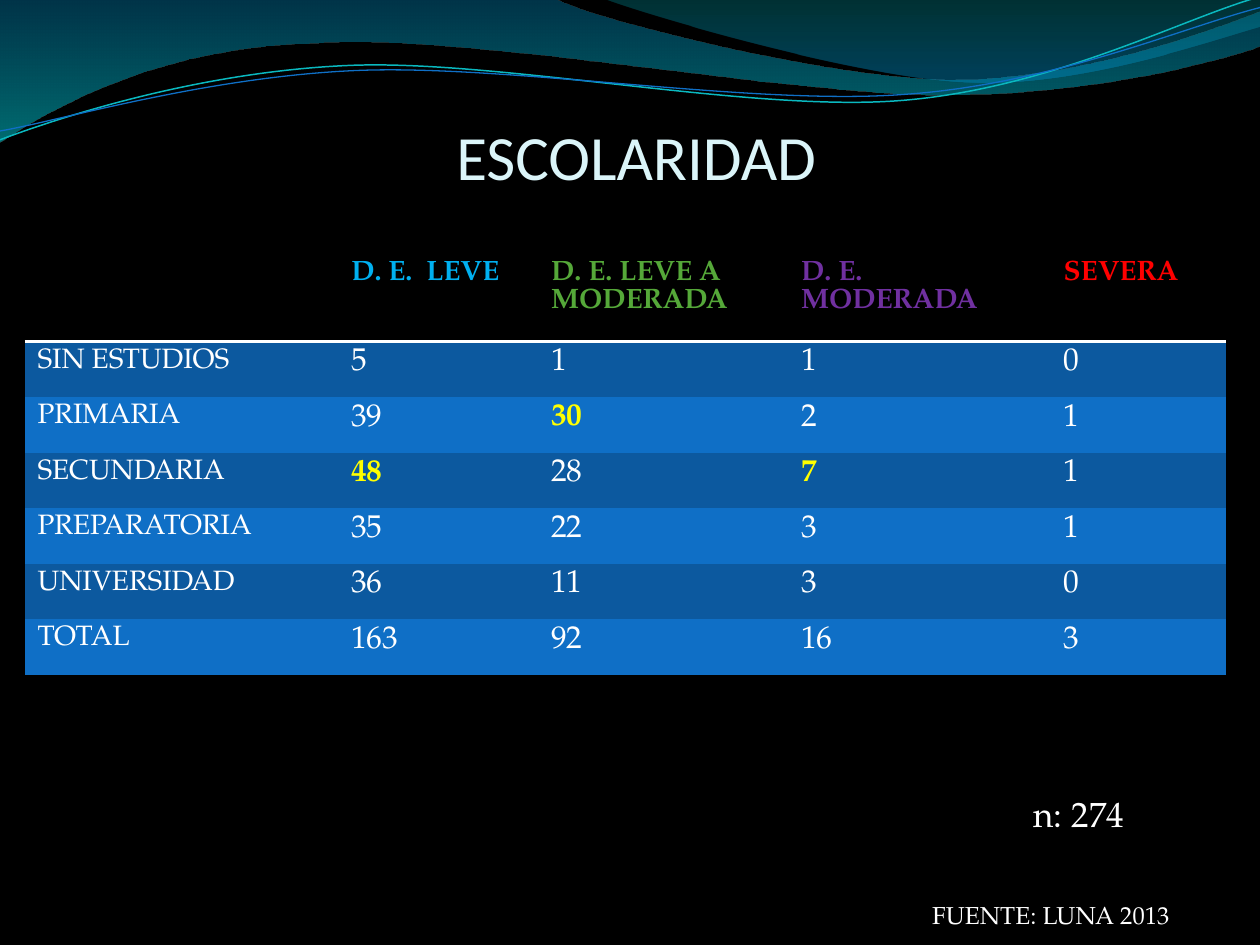
from dataclasses import dataclass
from typing import Optional

from lxml import etree
from pptx import Presentation
from pptx.dml.color import RGBColor
from pptx.enum.text import MSO_ANCHOR, MSO_AUTO_SIZE, PP_ALIGN
from pptx.oxml.ns import qn
from pptx.util import Emu, Inches, Pt

CENTER, LEFT = PP_ALIGN.CENTER, PP_ALIGN.LEFT
TOP, BOTTOM = MSO_ANCHOR.TOP, MSO_ANCHOR.BOTTOM
FIXED, GROW = MSO_AUTO_SIZE.NONE, MSO_AUTO_SIZE.SHAPE_TO_FIT_TEXT
GRID_COLUMNS = 100
SLIDE_WIDTH, SLIDE_HEIGHT = Inches(10), Inches(7.5)
PLAIN_TABLE_STYLE = "{2D5ABB26-0587-4C30-8999-92F81FD0307C}"

Point = tuple[float, float]


@dataclass(frozen=True)
class Theme:
    background: str = "000000"
    title: str = "DBF5F9"
    text: str = "FFFFFF"
    highlight: str = "FFFF00"
    bands: tuple[str, str] = ("0C599F", "0F6FC6")
    headings: tuple[str, ...] = ("FFFFFF", "00B0F0", "55A839", "7030A0", "FF0000")
    title_font: str = "Calibri"
    body_font: str = "TeX Gyre Pagella"
    title_size: int = 36
    label_size: int = 16
    value_size: int = 18
    sample_size: int = 20
    source_size: int = 14


@dataclass(frozen=True)
class TextStyle:
    size: int
    color: str
    font: str
    bold: bool = False


@dataclass(frozen=True)
class Label:
    text: str
    box: tuple[float, float, float, float]
    style: TextStyle
    align: PP_ALIGN = LEFT
    anchor: MSO_ANCHOR = TOP
    insets: tuple[float, float, float, float] = (1, 0.5, 1, 0.5)
    sizing: MSO_AUTO_SIZE = GROW


@dataclass(frozen=True)
class GradientStop:
    position: float
    color: str
    opacity: int


@dataclass(frozen=True)
class Wave:
    start: Point
    segments: tuple[tuple[Point, ...], ...]
    stops: tuple[GradientStop, ...] = ()
    line_color: Optional[str] = None
    line_width: float = 0


THEME = Theme()
BODY = THEME.body_font

WAVES = (
    Wave((0, 0), (
        ((44, -0.1),),
        ((47.6, 1.7), (66.4, 6.3), (75.8, 6.3)),
        ((85.3, 6.3), (95.8, 2.6), (100, 0.9)),
        ((100.1, 3.6),),
        ((98.3, 4.4), (87, 7.6), (74.6, 7.5)),
        ((62.2, 7.5), (38.2, 2.8), (25.7, 3.4)),
        ((12.9, 3.6), (4.6, 8.3), (-0.1, 11.3)),
    ), (GradientStop(0, "0074A1", 45), GradientStop(1, "00C6CF", 55))),
    Wave((47.9, -0.1), (
        ((50.9, 1.1), (68.2, 6.2), (76.9, 6.5)),
        ((85.6, 6.9), (96.1, 3.2), (100, 2.1)),
        ((100, 0),),
    ), (GradientStop(0, "00A1A9", 30), GradientStop(0.8, "008BBF", 45))),
    Wave((0, 11.1), (
        ((4.8, 9.3), (15.8, 5.7), (27.7, 5.2)),
        ((39.5, 4.7), (59.3, 8.9), (71.3, 8)),
        ((83.3, 7.1), (93.8, 1.5), (99.8, -0.2)),
    ), line_color="0AB8BF", line_width=0.85),
    Wave((0, 10.4), (
        ((4.7, 9.6), (16.4, 6.1), (28.3, 5.6)),
        ((40.3, 5.1), (59.7, 8.4), (71.7, 7.5)),
        ((83.6, 6.7), (94.1, 2.1), (100, 0.6)),
    ), line_color="0F6FC6", line_width=0.75),
)

LABELS = (
    Label("ESCOLARIDAD", (5.1, 6.8, 90.8, 8.5), TextStyle(THEME.title_size, THEME.title, THEME.title_font),
          CENTER, BOTTOM, (0, 0.5, 0, 0), FIXED),
    Label("n: 274", (81.05, 62.4, 12.6, 4.4), TextStyle(THEME.sample_size, THEME.text, BODY)),
    Label("FUENTE: LUNA 2013", (73, 70.95, 24.3, 3.4), TextStyle(THEME.source_size, THEME.text, BODY)),
)

HEADINGS = ("", "D. E.  LEVE", "D. E. LEVE A MODERADA", "D. E. MODERADA", "SEVERA")
ROWS = (
    ("SIN ESTUDIOS", "5", "1", "1", "0"),
    ("PRIMARIA", "39", "30", "2", "1"),
    ("SECUNDARIA", "48", "28", "7", "1"),
    ("PREPARATORIA", "35", "22", "3", "1"),
    ("UNIVERSIDAD", "36", "11", "3", "0"),
    ("TOTAL", "163", "92", "16", "3"),
)
HIGHLIGHTS = {(2, 2), (3, 1), (3, 3)}
TABLE_ORIGIN = (1.98, 20.2)
COLUMN_WIDTHS = (24.9, 15.87, 19.84, 20.84, 13.85)
ROW_HEIGHTS = (6.9,) + (4.41,) * len(ROWS)


def grid(units: float) -> Emu:
    return Emu(round(units * SLIDE_WIDTH / GRID_COLUMNS))


def rgb(color: str) -> RGBColor:
    return RGBColor.from_string(color)


def bend_segments(shape, segments: tuple[tuple[Point, ...], ...]) -> None:
    lines = iter(list(shape.element.spPr.iter(qn("a:lnTo"))))
    for controls in segments:
        first, *others = [next(lines) for _ in controls]
        if others:
            first.tag = qn("a:cubicBezTo")
        for other in others:
            first.append(other[0])
            other.getparent().remove(other)


def draw_wave(slide, wave: Wave) -> None:
    points = [wave.start] + [point for controls in wave.segments for point in controls]
    corners = [(grid(x), grid(y)) for x, y in points]
    builder = slide.shapes.build_freeform(*corners[0])
    builder.add_line_segments(corners[1:], close=bool(wave.stops))
    shape = builder.convert_to_shape()
    bend_segments(shape, wave.segments)
    shape.shadow.inherit = False
    if wave.line_color:
        shape.fill.background()
        shape.line.color.rgb = rgb(wave.line_color)
        shape.line.width = Pt(wave.line_width)
        return
    shape.line.fill.background()
    shape.fill.gradient()
    shape.fill.gradient_angle = 270
    for stop, target in zip(wave.stops, shape.fill.gradient_stops):
        target.position = stop.position
        target.color.rgb = rgb(stop.color)
    for stop, color in zip(wave.stops, shape.element.spPr.iter(qn("a:srgbClr"))):
        etree.SubElement(color, qn("a:alpha"), val=str(stop.opacity * 1000))


def add_run(paragraph, text: str, style: TextStyle) -> None:
    run = paragraph.add_run()
    run.text = text
    run.font.size = Pt(style.size)
    run.font.name = style.font
    run.font.bold = style.bold
    run.font.color.rgb = rgb(style.color)


def draw_label(slide, label: Label) -> None:
    frame = slide.shapes.add_textbox(*map(grid, label.box)).text_frame
    frame.word_wrap = True
    frame.auto_size = label.sizing
    frame.vertical_anchor = label.anchor
    frame.margin_left, frame.margin_top, frame.margin_right, frame.margin_bottom = map(grid, label.insets)
    paragraph = frame.paragraphs[0]
    paragraph.alignment = label.align
    add_run(paragraph, label.text, label.style)


def cell_style(row: int, column: int) -> TextStyle:
    if row == 0:
        return TextStyle(THEME.label_size, THEME.headings[column], BODY, True)
    if column == 0:
        return TextStyle(THEME.label_size, THEME.text, BODY)
    marked = (row, column) in HIGHLIGHTS
    return TextStyle(THEME.value_size, THEME.highlight if marked else THEME.text, BODY, marked)


def add_bottom_border(cell, color: str, width: float) -> None:
    border = etree.Element(qn("a:lnB"), w=str(Pt(width)))
    fill = etree.SubElement(border, qn("a:solidFill"))
    etree.SubElement(fill, qn("a:srgbClr"), val=color)
    cell._tc.get_or_add_tcPr().insert(0, border)


def draw_table(slide) -> None:
    size = (sum(COLUMN_WIDTHS), sum(ROW_HEIGHTS))
    table = slide.shapes.add_table(
        len(ROW_HEIGHTS), len(COLUMN_WIDTHS), *map(grid, TABLE_ORIGIN + size)).table
    table._tbl.tblPr.find(qn("a:tableStyleId")).text = PLAIN_TABLE_STYLE
    table.horz_banding = False
    for column, width in zip(table.columns, COLUMN_WIDTHS):
        column.width = grid(width)
    for row, height in zip(table.rows, ROW_HEIGHTS):
        row.height = grid(height)
    for row, texts in enumerate((HEADINGS, *ROWS)):
        for column, text in enumerate(texts):
            cell = table.cell(row, column)
            cell.fill.solid()
            cell.fill.fore_color.rgb = rgb(THEME.bands[(row - 1) % 2] if row else THEME.background)
            if row == 0:
                add_bottom_border(cell, THEME.text, 2)
            if text:
                add_run(cell.text_frame.paragraphs[0], text, cell_style(row, column))


def main() -> None:
    presentation = Presentation()
    presentation.slide_width, presentation.slide_height = SLIDE_WIDTH, SLIDE_HEIGHT
    slide = presentation.slides.add_slide(presentation.slide_layouts[6])
    slide.background.fill.solid()
    slide.background.fill.fore_color.rgb = rgb(THEME.background)
    for wave in WAVES:
        draw_wave(slide, wave)
    draw_table(slide)
    for label in LABELS:
        draw_label(slide, label)
    presentation.save("out.pptx")


if __name__ == "__main__":
    main()
